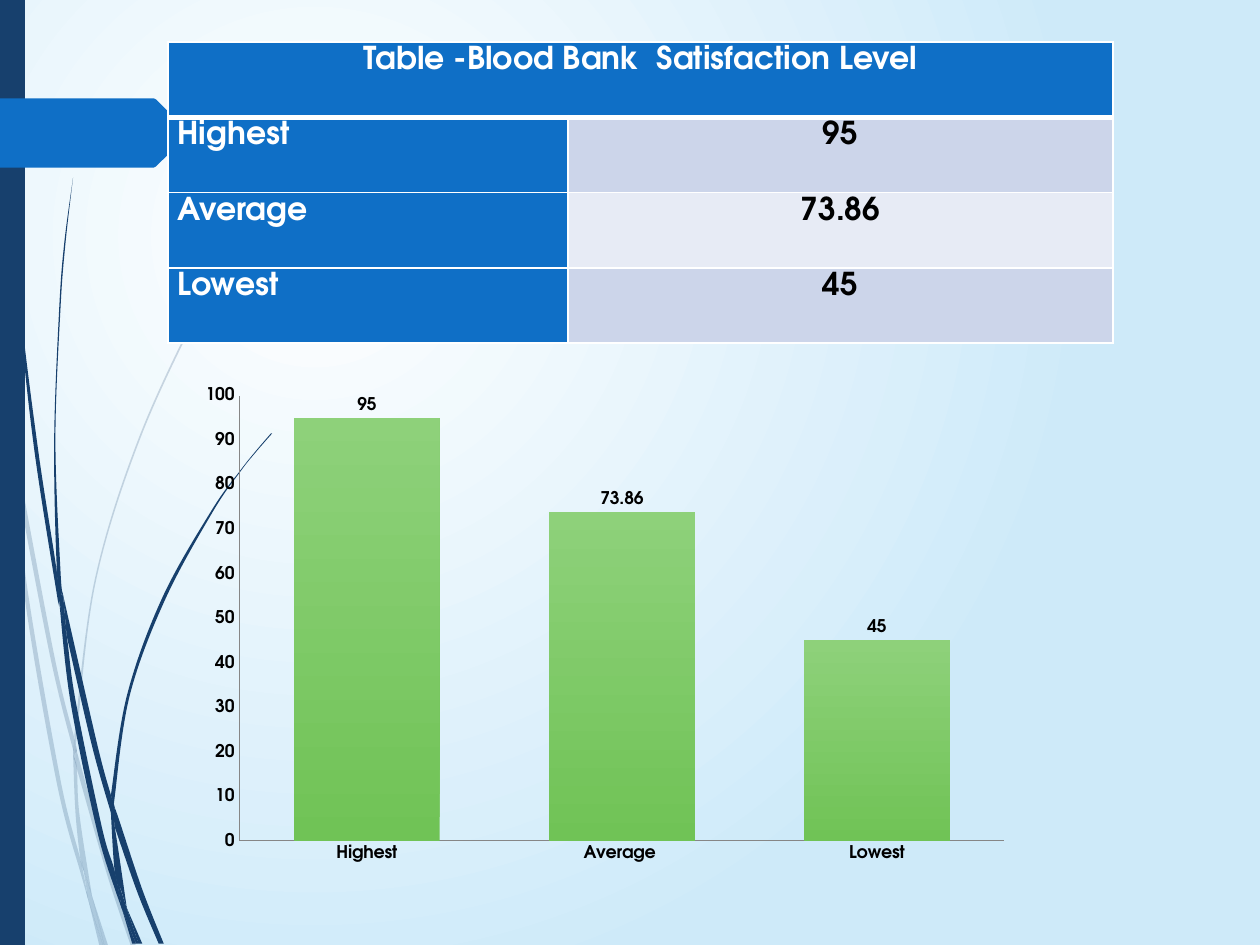
from dataclasses import dataclass

from lxml import etree
from pptx import Presentation
from pptx import util as u
from pptx.chart.data import CategoryChartData
from pptx.dml.color import RGBColor
from pptx.enum import chart as ch
from pptx.enum import text
from pptx.oxml import parse_xml
from pptx.oxml.ns import nsdecls, qn


@dataclass(frozen=True)
class Theme:
    """Colours, type and grid cell of the deck."""
    font: str = "TeX Gyre Adventor"
    head: int = 18
    note: int = 10
    navy: str = "17406D"
    blue: str = "0F6FC6"
    sky: str = "CEEAF9"
    white: str = "FFFFFF"
    black: str = "000000"
    bands: tuple = ("CCD5EA", "E7EBF5")
    bar: tuple = ("70C356", "8ED17A")
    axis: str = "868686"
    cell: float = u.Inches(1) / 12


T = Theme()
TITLE = "Table -Blood Bank  Satisfaction Level"
SCORES = {"Highest": 95, "Average ": 73.86, "Lowest": 45}

# Each blade of grass has two smooth edges, in inches: one down, one back up.
PALE = [
    ([(0, 2.82), (.06, 3.22), (.08, 3.5)], [(.07, 3.44), (0, 2.99)]),
    ([(.1, 3.45), (.43, 5.2), (.59, 5.86)], [(.59, 5.99), (.4, 5.22), (.12, 3.76)]),
    ([(.61, 5.96), (.64, 6.07), (.88, 6.92), (1.08, 7.51)],
     [(1.04, 7.51), (.85, 6.94), (.61, 6.1)]),
    ([(.73, 7.11), (.86, 7.51)], [(.83, 7.51)]),
    ([(.08, 3.5), (.12, 3.76), (.22, 4.69), (.48, 6.19), (.64, 6.83), (.7, 7.14)],
     [(.64, 6.93), (.45, 6.21), (.19, 4.7), (.08, 3.5)]),
    ([(.58, 5.99), (.61, 6.1), (.63, 6.46), (.73, 7.11)],
     [(.67, 6.92), (.64, 6.83), (.6, 6.46), (.58, 5.99)]),
    ([(2.17, 1.53), (2.01, 1.75), (1.86, 1.97), (1.58, 2.44), (1.1, 3.48),
      (.75, 4.61), (.59, 5.84)],
     [(.61, 5.96), (.61, 5.84), (.76, 4.62), (1.11, 3.49), (1.59, 2.45),
      (1.87, 1.98), (2.01, 1.75), (2.17, 1.54)]),
    ([(.7, 7.14), (.82, 7.51)], [(.79, 7.51)]),
    ([(.59, 5.86), (.61, 5.96), (.61, 6.1)], [(.58, 5.99)]),
    ([(.65, 6.83), (.67, 6.92), (.73, 7.11), (.83, 7.51)],
     [(.82, 7.51), (.7, 7.14), (.69, 7.07)]),
]
DARK = [
    ([(.03, 0), (.04, .48), (.06, 1.09), (.15, 2.32), (.3, 3.55), (.45, 4.53), (.47, 4.81)],
     [(.46, 4.77), (.27, 3.55), (.14, 2.33), (.05, 1.1), (.03, .48), (.02, 0)]),
    ([(.5, 4.72), (.77, 5.9), (.88, 6.31)], [(.88, 6.45), (.73, 5.92), (.53, 5.05)]),
    ([(.91, 6.41), (.94, 6.49), (1.13, 7.06), (1.3, 7.49)],
     [(1.26, 7.49), (1.09, 7.08), (.91, 6.56)]),
    ([(.47, 4.77), (.53, 5.05), (.6, 5.56), (.81, 6.57), (.91, 6.91), (.97, 7.22)],
     [(.92, 7.08), (.77, 6.59), (.56, 5.57), (.47, 4.77)]),
    ([(.58, 1.41), (.51, 1.93), (.47, 2.45), (.43, 3.49), (.45, 4.49), (.49, 4.72)],
     [(.5, 4.72), (.48, 4.53), (.44, 3.49), (.48, 2.45), (.52, 1.93), (.58, 1.41)]),
    ([(1, 7.19), (1.13, 7.49)], [(1.1, 7.49)]),
    ([(.45, 4.49), (.49, 4.72), (.5, 4.72), (.53, 5.05)], [(.47, 4.77), (.45, 4.53)]),
    ([(2.15, 3.44), (2.03, 3.58), (1.91, 3.73), (1.68, 4.05), (1.29, 4.74),
      (1.01, 5.51), (.88, 6.31)],
     [(.91, 6.41), (.91, 6.33), (1.03, 5.52), (1.31, 4.76), (1.69, 4.06),
      (1.91, 3.74), (2.03, 3.59), (2.16, 3.44)]),
    ([(.97, 7.22), (1.08, 7.49)], [(1.05, 7.49)]),
    ([(.88, 6.45), (.91, 6.56), (1, 7.16), (1, 7.19)], [(.96, 7.06), (.91, 6.91), (.88, 6.45)]),
    ([(.88, 6.31), (.91, 6.41), (.91, 6.56)], [(.88, 6.45)]),
    ([(.91, 6.91), (1, 7.19), (1.1, 7.49)], [(1.08, 7.49), (.97, 7.22), (.96, 7.17)]),
]


def rgb(hue):
    """Turn a hex string into a colour."""
    return RGBColor.from_string(hue)


def grid(*cells):
    """Turn grid cells into lengths."""
    return [u.Emu(round(n * T.cell)) for n in cells]


def back(slide):
    """Fill the slide with a radial glow."""
    fill = slide.background.fill
    fill.gradient()
    for stop, hue in zip(fill.gradient_stops, (T.white, T.sky)):
        stop.color.rgb = rgb(hue)
    grad = slide.background._cSld.bg.bgPr.find(qn("a:gradFill"))
    grad.replace(grad.find(qn("a:lin")), parse_xml(
        f'<a:path {nsdecls("a")} path="circle">'
        '<a:fillToRect l="50000" t="50000" r="100000" b="100000"/></a:path>'))


def shape(slide, pts, hue):
    """Draw a filled outline through points given in inches."""
    pts = [(u.Inches(x), u.Inches(y)) for x, y in pts]
    pen = slide.shapes.build_freeform(*pts[0], scale=1.0)
    pen.add_line_segments(pts[1:], close=True)
    form = pen.convert_to_shape()
    form.shadow.inherit = False
    form.fill.solid()
    form.fill.fore_color.rgb = rgb(hue)
    form.line.fill.background()
    return form


def curve(knots):
    """Yield two handles and an end for each smooth step between knots."""
    ends = [knots[0], *knots, knots[-1]]
    for a, b, c, d in zip(ends, ends[1:], ends[2:], ends[3:]):
        yield [q + (r - p) / 6 for p, q, r in zip(a, b, c)]
        yield [q - (r - p) / 6 for p, q, r in zip(b, c, d)]
        yield c


def blade(slide, down, up, alpha):
    """Draw one blade of grass with curved edges."""
    pts = [down[0], *curve(down), down[-1], up[0], up[0], *curve(up)]
    form = shape(slide, pts, T.navy)
    line = form._element.spPr.find(f".//{qn('a:path')}")
    legs = line.findall(qn("a:lnTo"))
    for trio in zip(*[iter(legs)] * 3):
        bend = parse_xml(f'<a:cubicBezTo {nsdecls("a")}/>')
        trio[0].addprevious(bend)
        for leg in trio:
            bend.append(leg[0])
            line.remove(leg)
    if alpha < 100:
        tint = form._element.spPr.find(qn("a:solidFill"))[0]
        etree.SubElement(tint, qn("a:alpha")).set("val", str(alpha * 1000))


def edge(cell, bottom):
    """Give a cell white borders."""
    props = cell._tc.get_or_add_tcPr()
    for spot, (side, wide) in enumerate(zip("LRTB", (1, 1, 1, bottom))):
        props.insert(spot, parse_xml(
            f'<a:ln{side} {nsdecls("a")} w="{u.Pt(wide)}"><a:solidFill>'
            f'<a:srgbClr val="{T.white}"/></a:solidFill></a:ln{side}>'))


def put(cell, words, fill, hue, align, bottom=1):
    """Write and style one table cell."""
    cell.fill.solid()
    cell.fill.fore_color.rgb = rgb(fill)
    cell.margin_left = cell.margin_right = u.Pt(5.4)
    cell.margin_top = cell.margin_bottom = 0
    para = cell.text_frame.paragraphs[0]
    para.text, para.alignment, para.line_spacing = words, align, 1.15
    font = para.runs[0].font
    font.name, font.size, font.bold = T.font, u.Pt(T.head), True
    font.color.rgb = rgb(hue)
    edge(cell, bottom)


def table(slide):
    """Add the score table."""
    rows = len(SCORES) + 1
    tab = slide.shapes.add_table(rows, 2, *grid(16, 4, 90, 7.17 * rows)).table
    for col, wide in zip(tab.columns, grid(38.1, 51.9)):
        col.width = wide
    mid, left = text.PP_ALIGN.CENTER, text.PP_ALIGN.LEFT
    tab.cell(0, 0).merge(tab.cell(0, 1))
    put(tab.cell(0, 0), TITLE, T.blue, T.white, mid, 3)
    edge(tab.cell(0, 1), 3)
    for row, (name, score) in enumerate(SCORES.items(), 1):
        put(tab.cell(row, 0), name.strip(), T.blue, T.white, left)
        put(tab.cell(row, 1), str(score), T.bands[(row - 1) % 2], T.black, mid)


def chart(slide):
    """Add the score column chart."""
    data = CategoryChartData()
    data.categories = list(SCORES)
    data.add_series("Series 1", list(SCORES.values()))
    kind = ch.XL_CHART_TYPE.COLUMN_CLUSTERED
    plan = slide.shapes.add_chart(kind, *grid(18, 36, 79.25, 47), data).chart
    plan.has_legend = plan.has_title = False
    plan.font.name, plan.font.size = T.font, u.Pt(T.note)
    plan.font.color.rgb = rgb(T.black)
    for axis in (plan.category_axis, plan.value_axis):
        axis.has_major_gridlines = False
        axis.major_tick_mark = ch.XL_TICK_MARK.NONE
        axis.tick_labels.font.bold = True
        axis.format.line.color.rgb = rgb(T.axis)
        axis.format.line.width = u.Pt(.75)
    plan.value_axis.minimum_scale, plan.value_axis.maximum_scale = 0, 100
    plan.value_axis.major_unit = 10
    plot = plan.plots[0]
    plot.gap_width, plot.vary_by_categories, plot.has_data_labels = 75, False, True
    tags = plot.data_labels
    tags.show_value, tags.font.bold = True, True
    tags.position = ch.XL_LABEL_POSITION.OUTSIDE_END
    fill = plot.series[0].format.fill
    fill.gradient()
    fill.gradient_angle = 90
    for stop, hue in zip(fill.gradient_stops, T.bar):
        stop.color.rgb = rgb(hue)


def main():
    """Build and save the slide."""
    deck = Presentation()
    deck.slide_width, deck.slide_height = grid(120, 90)
    slide = deck.slides.add_slide(deck.slide_layouts[6])
    back(slide)
    for blades, alpha in ((PALE, 20), (DARK, 100)):
        for down, up in blades:
            blade(slide, down, up, alpha)
    shape(slide, [(0, 0), (.2, 0), (.2, 7.5), (0, 7.5)], T.navy)
    shape(slide, [(0, .78), (1.22, .78), (1.24, .79), (1.49, 1.04), (1.49, 1.07),
                  (1.24, 1.32), (1.22, 1.33), (0, 1.33)], T.blue)
    table(slide)
    chart(slide)
    deck.save("out.pptx")


if __name__ == "__main__":
    main()
